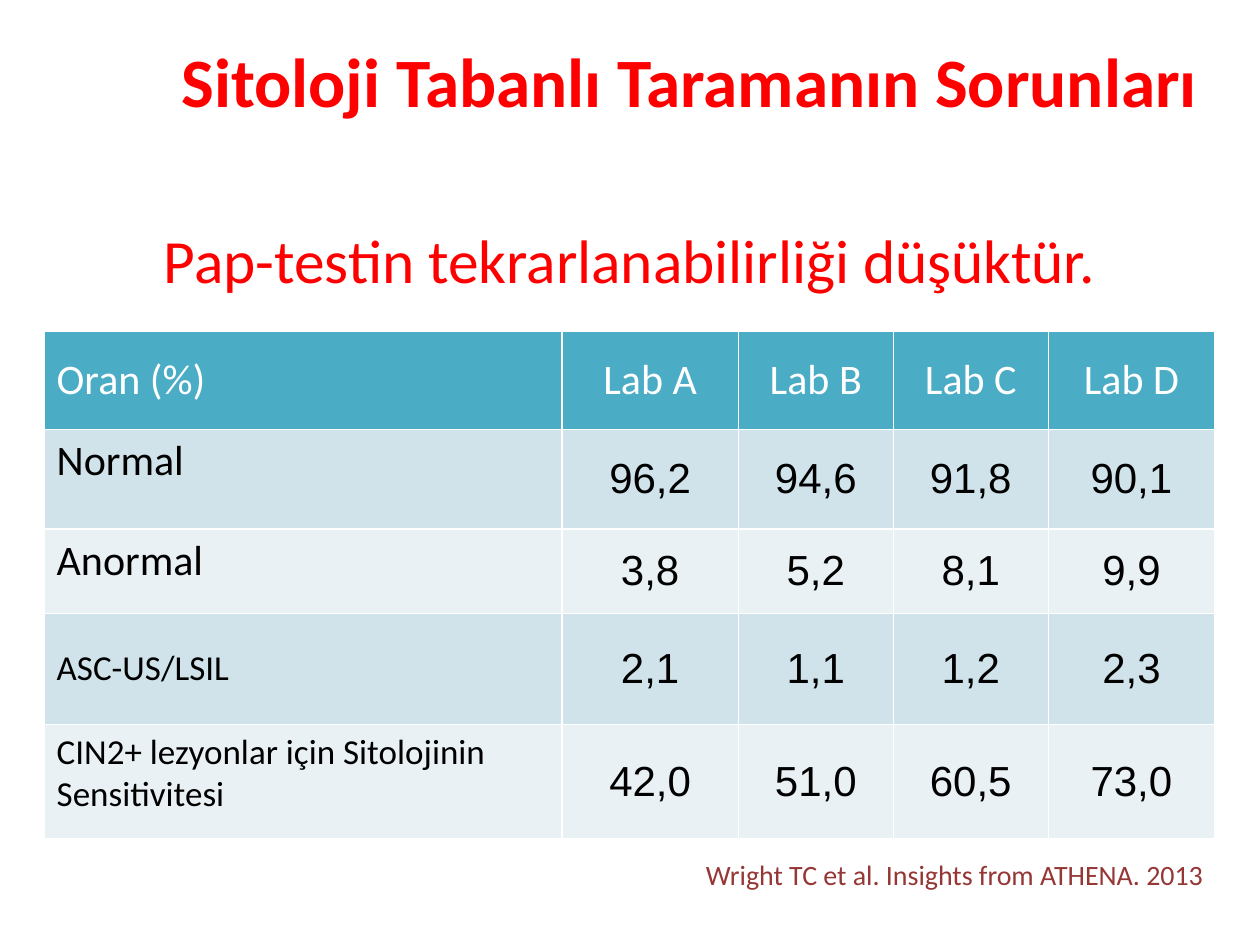
from dataclasses import dataclass

from lxml.etree import SubElement
from pptx import Presentation
from pptx.dml.color import RGBColor
from pptx.enum.text import MSO_ANCHOR as Anchor, PP_ALIGN as Align
from pptx.oxml.ns import qn
from pptx.util import Inches, Pt

RED, WHITE, BLACK, BROWN = "FF0000", "FFFFFF", "000000", "953735"
HEADER_FILL = "4BACC6"
BAND_FILLS = ("D0E3EA", "E9F1F5")


@dataclass
class Style:
    size: float
    color: str
    font: str = "Calibri"
    bold: bool = False
    align: Align = Align.CENTER
    anchor: Anchor = Anchor.MIDDLE


@dataclass
class Label:
    text: str
    left: float
    top: float
    width: float
    height: float
    style: Style


@dataclass
class Row:
    name: str
    values: tuple[str, ...]
    height: float
    name_size: float = 24
    name_anchor: Anchor = Anchor.MIDDLE


LABELS = [
    Label("Sitoloji Tabanlı Taramanın Sorunları", 1.22, 0.05, 8.51, 1.17,
          Style(39.6, RED, bold=True)),
    Label("Pap-testin tekrarlanabilirliği düşüktür.", 0.35, 1.47, 9.29, 1.17,
          Style(35.1, RED)),
    Label("Wright TC et al. Insights from ATHENA. 2013", 3.82, 6.76, 5.83, 0.37,
          Style(16, BROWN, align=Align.RIGHT, anchor=Anchor.TOP)),
]
COLUMN_WIDTHS = (4.11, 1.4, 1.23, 1.23, 1.32)
ROWS = [
    Row("Oran (%)", ("Lab A", "Lab B", "Lab C", "Lab D"), 0.78),
    Row("Normal", ("96,2", "94,6", "91,8", "90,1"), 0.79, name_anchor=Anchor.TOP),
    Row("Anormal", ("3,8", "5,2", "8,1", "9,9"), 0.67, name_anchor=Anchor.TOP),
    Row("ASC-US/LSIL", ("2,1", "1,1", "1,2", "2,3"), 0.88, 20),
    Row("CIN2+ lezyonlar için Sitolojinin Sensitivitesi",
        ("42,0", "51,0", "60,5", "73,0"), 0.91, 20, Anchor.TOP),
]


def rgb(color: str) -> RGBColor:
    return RGBColor.from_string(color)


def write_text(text_frame, text: str, style: Style) -> None:
    text_frame.word_wrap = True
    paragraph = text_frame.paragraphs[0]
    paragraph.text = text
    paragraph.alignment = style.align
    font = paragraph.font
    font.name, font.size, font.bold = style.font, Pt(style.size), style.bold
    font.color.rgb = rgb(style.color)


def add_label(slide, label: Label) -> None:
    box = slide.shapes.add_textbox(Inches(label.left), Inches(label.top),
                                   Inches(label.width), Inches(label.height))
    write_text(box.text_frame, label.text, label.style)
    box.text_frame.vertical_anchor = label.style.anchor


def add_borders(cell, color: str, width: float) -> None:
    properties = cell._tc.get_or_add_tcPr()
    for side in ("a:lnL", "a:lnR", "a:lnT", "a:lnB"):
        line = SubElement(properties, qn(side), w=str(Pt(width)))
        SubElement(SubElement(line, qn("a:solidFill")), qn("a:srgbClr"), val=color)


def fill_cell(cell, text: str, style: Style, fill: str) -> None:
    add_borders(cell, WHITE, 1)
    cell.fill.solid()
    cell.fill.fore_color.rgb = rgb(fill)
    cell.vertical_anchor = style.anchor
    write_text(cell.text_frame, text, style)


def add_results_table(slide, left: float, top: float) -> None:
    height = sum(row.height for row in ROWS)
    table = slide.shapes.add_table(
        len(ROWS), len(COLUMN_WIDTHS), Inches(left), Inches(top),
        Inches(sum(COLUMN_WIDTHS)), Inches(height)).table
    for column, width in zip(table.columns, COLUMN_WIDTHS):
        column.width = Inches(width)
    for index, row in enumerate(ROWS):
        table.rows[index].height = Inches(row.height)
        is_header = index == 0
        fill = HEADER_FILL if is_header else BAND_FILLS[(index - 1) % 2]
        color = WHITE if is_header else BLACK
        name_style = Style(row.name_size, color, align=Align.LEFT,
                           anchor=row.name_anchor)
        value_style = Style(24, color, "Calibri" if is_header else "Arial")
        fill_cell(table.cell(index, 0), row.name, name_style, fill)
        for column_index, value in enumerate(row.values, start=1):
            fill_cell(table.cell(index, column_index), value, value_style, fill)


def main() -> None:
    presentation = Presentation()
    presentation.slide_width, presentation.slide_height = Inches(10), Inches(7.5)
    slide = presentation.slides.add_slide(presentation.slide_layouts[6])

    # Laboratory comparison
    add_results_table(slide, 0.35, 2.63)

    # Title, statement and citation
    for label in LABELS:
        add_label(slide, label)

    presentation.save("out.pptx")


if __name__ == "__main__":
    main()
